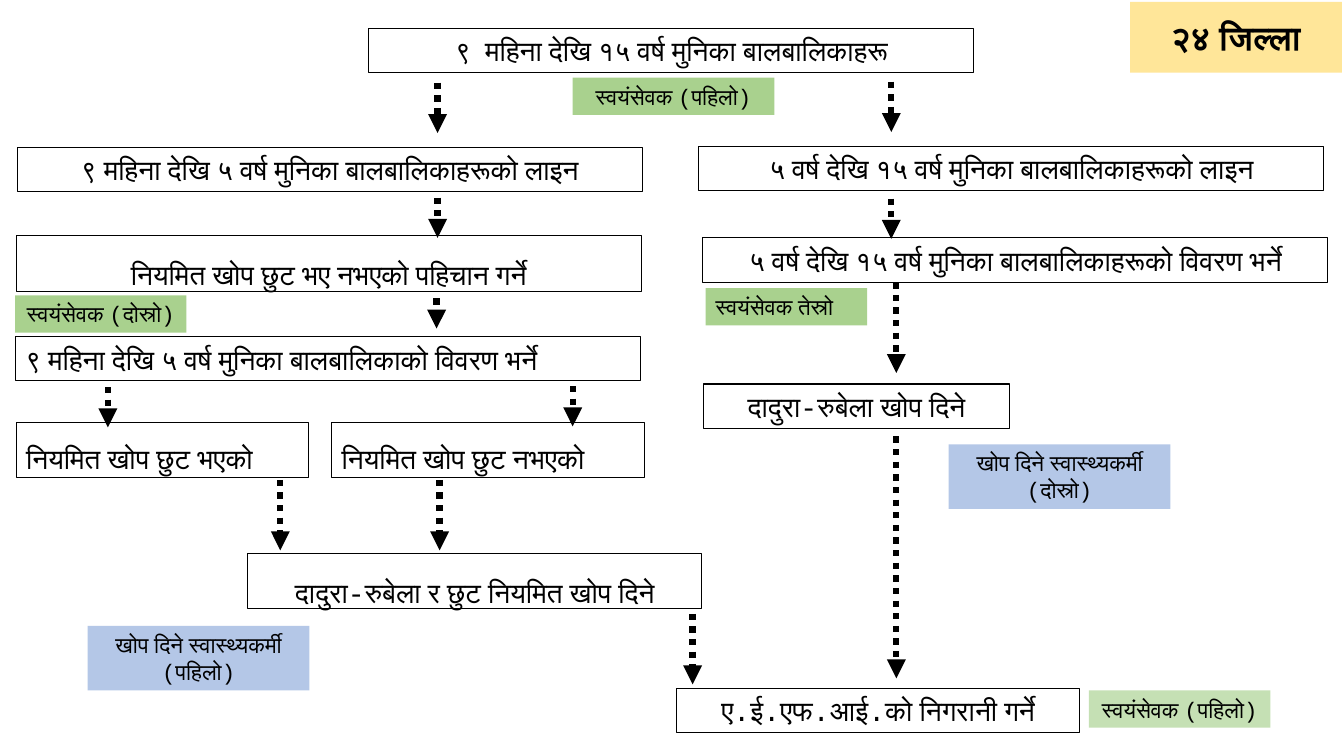
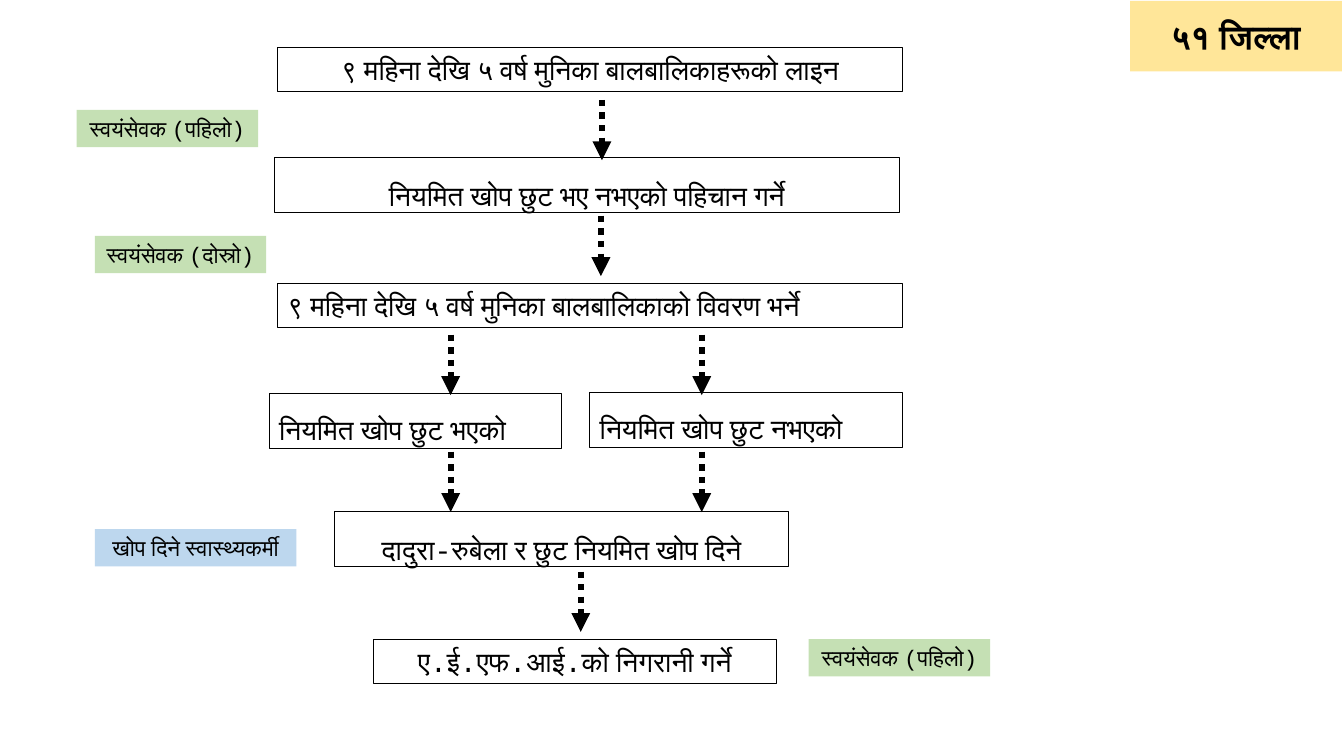
from dataclasses import dataclass, replace

import pptx
import pptx.dml.color
import pptx.enum.dml
import pptx.enum.shapes
import pptx.enum.text
import pptx.oxml.ns
import pptx.util
from lxml import etree

PX = 9144  # EMU; one hundred px make an inch
SLIDE_WIDTH, SLIDE_HEIGHT = 1333, 750
FONT = "Courier New"
BLACK = "000000"
LEFT = pptx.enum.text.PP_ALIGN.LEFT
CENTER = pptx.enum.text.PP_ALIGN.CENTER
TOP = pptx.enum.text.MSO_ANCHOR.TOP
MIDDLE = pptx.enum.text.MSO_ANCHOR.MIDDLE


@dataclass(frozen=True)
class Style:
    height: int
    size: int
    fill: str | None = None
    align: pptx.enum.text.PP_ALIGN = CENTER
    anchor: pptx.enum.text.MSO_ANCHOR = MIDDLE
    spacing: float = 1.0
    bold: bool = False


@dataclass(frozen=True)
class Box:
    text: str
    left: int
    top: int
    width: int
    style: Style


@dataclass(frozen=True)
class Arrow:
    """A downward arrow."""
    x: int
    top: int
    length: int


STEP = Style(44, 20)
STEP_LEFT = replace(STEP, align=LEFT)
TALL_STEP = Style(55, 20, anchor=TOP, spacing=1.5)
GROUP = replace(TALL_STEP, align=LEFT, anchor=MIDDLE)
VOLUNTEER = Style(37, 16, fill="A9D18E")
VOLUNTEER_LEFT = replace(VOLUNTEER, align=LEFT)
VOLUNTEER_PALE = replace(VOLUNTEER, fill="C5E0B4")
HEALTH_WORKER = Style(64, 16, fill="B4C7E7", anchor=TOP)
HEALTH_WORKER_PALE = Style(37, 16, fill="BDD7EE", anchor=TOP)
DISTRICTS = Style(70, 24, fill="FFE699", bold=True)

YOUNGER_LINE = "९ महिना देखि ५ वर्ष मुनिका बालबालिकाहरूको लाइन"
YOUNGER_RECORD = "९ महिना देखि ५ वर्ष मुनिका बालबालिकाको विवरण भर्ने"
IDENTIFY_MISSED = "नियमित खोप छुट भए नभएको पहिचान गर्ने"
MISSED = "नियमित खोप छुट भएको"
NOT_MISSED = "नियमित खोप छुट नभएको"
GIVE_BOTH = "दादुरा-रुबेला र छुट नियमित खोप दिने"
MONITOR = "ए.ई.एफ.आई.को निगरानी गर्ने"
FIRST_VOLUNTEER = "स्वयंसेवक (पहिलो)"
SECOND_VOLUNTEER = "स्वयंसेवक (दोस्रो)"
VACCINATOR = "खोप दिने स्वास्थ्यकर्मी"

BOXES_24 = [
    Box("९  महिना देखि १५ वर्ष मुनिका बालबालिकाहरू", 366, 28, 600, STEP),
    Box(FIRST_VOLUNTEER, 568, 77, 200, VOLUNTEER),
    Box(YOUNGER_LINE, 17, 146, 620, STEP),
    Box(IDENTIFY_MISSED, 16, 234, 620, TALL_STEP),
    Box(SECOND_VOLUNTEER, 15, 293, 170, VOLUNTEER),
    Box(YOUNGER_RECORD, 15, 334, 620, STEP_LEFT),
    Box(MISSED, 16, 419, 290, GROUP),
    Box(NOT_MISSED, 329, 419, 310, GROUP),
    Box(GIVE_BOTH, 246, 549, 450, TALL_STEP),
    Box(VACCINATOR + "\n(पहिलो)", 87, 621, 220, HEALTH_WORKER),
    Box("५ वर्ष देखि १५ वर्ष मुनिका बालबालिकाहरूको लाइन", 693, 145, 620, STEP),
    Box("५ वर्ष देखि १५ वर्ष मुनिका बालबालिकाहरूको विवरण भर्ने", 697, 236, 620, STEP),
    Box("स्वयंसेवक तेस्रो", 700, 286, 160, VOLUNTEER_LEFT),
    Box("दादुरा-रुबेला खोप दिने", 698, 381, 303, STEP),
    Box(VACCINATOR + "\n(दोस्रो)", 941, 441, 220, HEALTH_WORKER),
    Box(MONITOR, 671, 683, 400, STEP),
    Box(FIRST_VOLUNTEER, 1080, 685, 180, VOLUNTEER_PALE),
    Box("२४ जिल्ला", 1121, 2, 210, DISTRICTS),
]
ARROWS_24 = [
    Arrow(434, 82, 50), Arrow(434, 196, 40), Arrow(433, 296, 30),
    Arrow(107, 384, 40), Arrow(568, 383, 40),
    Arrow(278, 476, 70), Arrow(436, 476, 70), Arrow(687, 609, 70),
    Arrow(884, 81, 50), Arrow(884, 197, 40), Arrow(889, 280, 90),
    Arrow(889, 433, 240),
]

BOXES_51 = [
    Box(YOUNGER_LINE, 275, 47, 620, STEP),
    Box(FIRST_VOLUNTEER, 76, 109, 180, VOLUNTEER_PALE),
    Box(IDENTIFY_MISSED, 272, 156, 620, TALL_STEP),
    Box(SECOND_VOLUNTEER, 94, 234, 170, VOLUNTEER_PALE),
    Box(YOUNGER_RECORD, 275, 281, 620, STEP_LEFT),
    Box(MISSED, 267, 390, 290, GROUP),
    Box(NOT_MISSED, 585, 389, 310, GROUP),
    Box(GIVE_BOTH, 332, 507, 450, TALL_STEP),
    Box(VACCINATOR, 94, 525, 200, HEALTH_WORKER_PALE),
    Box(MONITOR, 370, 634, 400, STEP),
    Box(FIRST_VOLUNTEER, 802, 634, 180, VOLUNTEER_PALE),
    Box("५१ जिल्ला", 1121, 1, 210, DISTRICTS),
]
ARROWS_51 = [
    Arrow(597, 99, 60), Arrow(596, 214, 60),
    *(Arrow(x, top, 60) for x in (447, 696) for top in (332, 448)),
    Arrow(576, 567, 60),
]


def px(length: int) -> pptx.util.Emu:
    return pptx.util.Emu(length * PX)


def color(value: str) -> pptx.dml.color.RGBColor:
    return pptx.dml.color.RGBColor.from_string(value)


def write_text(frame, text: str, *, size: int, align, anchor,
               spacing: float = 1.0, bold: bool = False) -> None:
    frame.word_wrap = True
    frame.auto_size = pptx.enum.text.MSO_AUTO_SIZE.SHAPE_TO_FIT_TEXT
    frame.vertical_anchor = anchor
    for index, line in enumerate(text.split("\n")):
        paragraph = frame.add_paragraph() if index else frame.paragraphs[0]
        paragraph.alignment = align
        paragraph.line_spacing = spacing
        run = paragraph.add_run()
        run.text = line
        run.font.name = FONT
        run.font.size = pptx.util.Pt(size)
        run.font.bold = bold
        run.font.color.rgb = color(BLACK)


def draw_box(slide, box: Box) -> None:
    """Filled boxes are role tags without outline; the others are outlined steps."""
    style = box.style
    shape = slide.shapes.add_shape(
        pptx.enum.shapes.MSO_SHAPE.RECTANGLE,
        px(box.left), px(box.top), px(box.width), px(style.height))
    shape.shadow.inherit = False
    if style.fill:
        shape.fill.solid()
        shape.fill.fore_color.rgb = color(style.fill)
        shape.line.fill.background()
    else:
        shape.fill.background()
        shape.line.color.rgb = color(BLACK)
        shape.line.width = pptx.util.Pt(0.75)
    write_text(shape.text_frame, box.text, size=style.size, align=style.align,
               anchor=style.anchor, spacing=style.spacing, bold=style.bold)


def draw_arrow(slide, arrow: Arrow) -> None:
    connector = slide.shapes.add_connector(
        pptx.enum.shapes.MSO_CONNECTOR.STRAIGHT,
        px(arrow.x), px(arrow.top), px(arrow.x), px(arrow.top + arrow.length))
    line = connector.line
    line.color.rgb = color(BLACK)
    line.width = pptx.util.Pt(4.5)
    line.dash_style = pptx.enum.dml.MSO_LINE.ROUND_DOT
    qn = pptx.oxml.ns.qn
    properties = connector._element.spPr
    etree.SubElement(properties.find(qn("a:ln")), qn("a:tailEnd"), type="triangle")
    etree.SubElement(properties, qn("a:effectLst"))


def add_flow(deck, boxes: list[Box], arrows: list[Arrow]) -> None:
    slide = deck.slides.add_slide(deck.slide_layouts[6])
    for box in boxes:
        draw_box(slide, box)
    for arrow in arrows:
        draw_arrow(slide, arrow)


def main() -> None:
    deck = pptx.Presentation()
    deck.slide_width = px(SLIDE_WIDTH)
    deck.slide_height = px(SLIDE_HEIGHT)
    add_flow(deck, BOXES_24, ARROWS_24)
    add_flow(deck, BOXES_51, ARROWS_51)
    deck.save("out.pptx")


if __name__ == "__main__":
    main()
